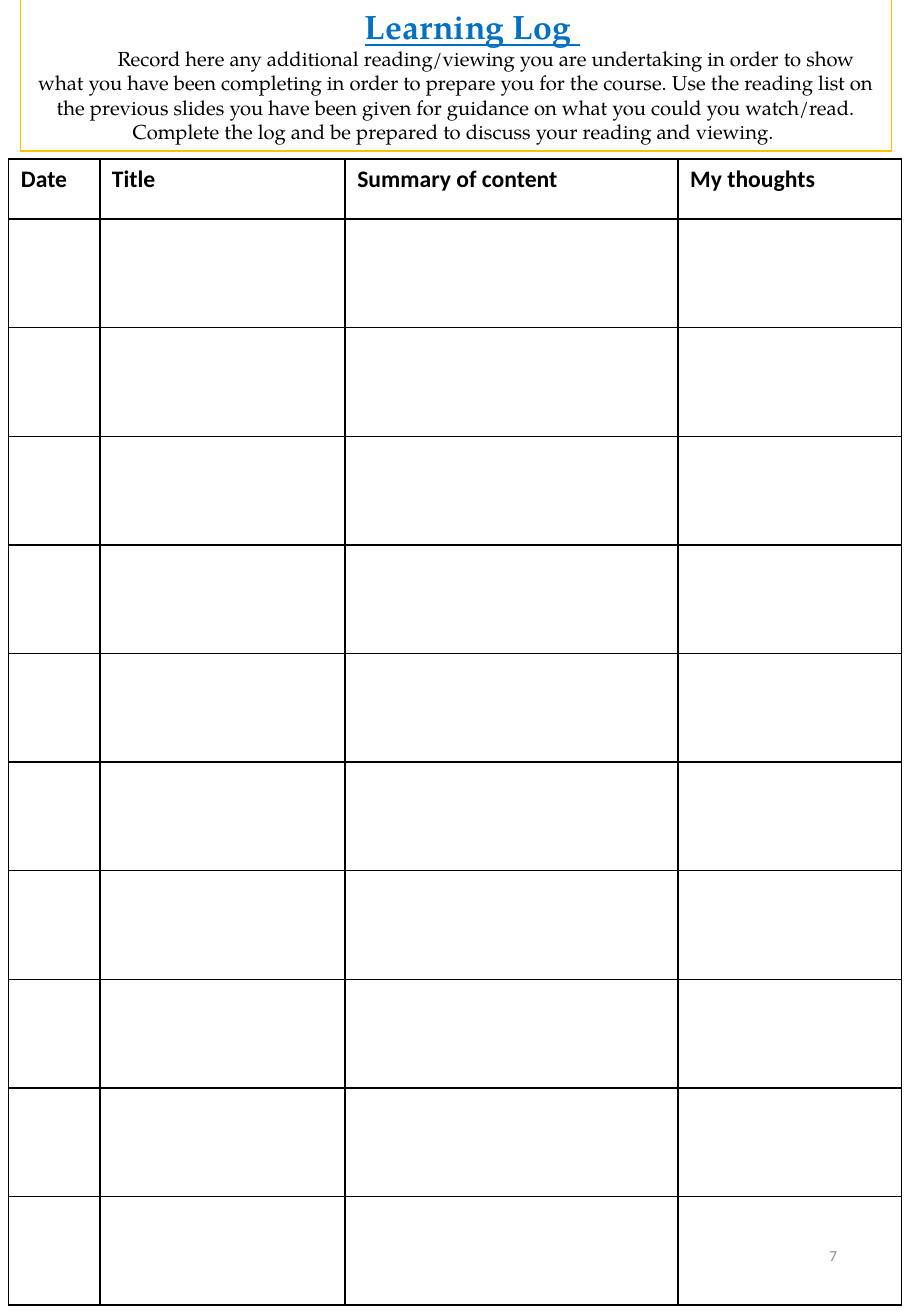
from pptx import Presentation
from pptx.dml.color import RGBColor
from pptx.enum import text as t
from pptx.oxml import parse_xml
from pptx.oxml.ns import nsdecls
from pptx.util import Pt

BLUE = RGBColor(0x00, 0x70, 0xC0)
GOLD = RGBColor(0xFF, 0xC0, 0x00)
GREY = RGBColor(0x8C, 0x8C, 0x8C)
BLACK = RGBColor(0, 0, 0)
WHITE = RGBColor(0xFF, 0xFF, 0xFF)
SERIF, SANS = "TeX Gyre Pagella", "Calibri"

HEADS = ["Date", "Title", "Summary of content", "My thoughts"]
COLS = [54, 145.4, 197.3, 132.5]
ROWS = [35.5] + [64.35] * 10
INTRO = (
    "Record here any additional reading/viewing you are undertaking in order "
    "to show what you have been completing in order to prepare you for the "
    "course. Use the reading list on the previous slides you have been given "
    "for guidance on what you could you watch/read. Complete the log and be "
    "prepared to discuss your reading and viewing. "
)


def write(para, words, size=12, font=SERIF, color=BLACK, bold=False,
          under=False, align=None, indent=0):
    """Add a formatted run to a paragraph."""
    run = para.add_run()
    run.text = words
    run.font.size, run.font.name = Pt(size), font
    run.font.bold, run.font.underline = bold, under
    run.font.color.rgb = color
    if align is not None:
        para.alignment = align
    if indent:
        para._p.get_or_add_pPr().set("indent", str(Pt(indent)))


class Page:
    def __init__(self, deck, font=SANS, line=1):
        self.slide = deck.slides.add_slide(deck.slide_layouts[5])
        self.font, self.line = font, line

    def title(self, left, top, width, height):
        """Frame the title placeholder and return its text frame."""
        box = self.slide.shapes.title
        box.left, box.top = Pt(left), Pt(top)
        box.width, box.height = Pt(width), Pt(height)
        box.fill.solid()
        box.fill.fore_color.rgb = WHITE
        box.line.color.rgb = GOLD
        box.line.width = Pt(self.line)
        frame = box.text_frame
        frame.word_wrap = True
        frame.vertical_anchor = t.MSO_ANCHOR.MIDDLE
        frame.auto_size = t.MSO_AUTO_SIZE.SHAPE_TO_FIT_TEXT
        return frame

    def border(self, cell):
        props = cell._tc.get_or_add_tcPr()
        for i, side in enumerate(("lnL", "lnR", "lnT", "lnB")):
            props.insert(i, parse_xml(
                f'<a:{side} {nsdecls("a")} w="{Pt(self.line)}"><a:solidFill>'
                f'<a:srgbClr val="{BLACK}"/></a:solidFill></a:{side}>'))

    def table(self, left, top, cols, rows, heads):
        grid = self.slide.shapes.add_table(
            len(rows), len(cols), Pt(left), Pt(top),
            Pt(sum(cols)), Pt(sum(rows))).table
        grid.first_row = grid.horz_banding = False
        for col, width in zip(grid.columns, cols):
            col.width = Pt(width)
        for row, height in zip(grid.rows, rows):
            row.height = Pt(height)
        for cell in grid.iter_cells():
            cell.fill.background()
            self.border(cell)
        for cell, head in zip(grid.rows[0].cells, heads):
            write(cell.text_frame.paragraphs[0], head, size=14,
                  font=self.font, bold=True)

    def label(self, left, top, width, height, words, **style):
        box = self.slide.shapes.add_textbox(
            Pt(left), Pt(top), Pt(width), Pt(height))
        frame = box.text_frame
        frame.word_wrap = True
        frame.vertical_anchor = t.MSO_ANCHOR.MIDDLE
        write(frame.paragraphs[0], words, font=self.font, **style)


def main():
    deck = Presentation()
    deck.slide_width, deck.slide_height = Pt(540), Pt(779.76)
    page = Page(deck)

    # Heading and instructions
    frame = page.title(12.2, -0.7, 516.2, 90)
    mid = {"align": t.PP_ALIGN.CENTER, "indent": 36}
    head = frame.paragraphs[0]
    write(head, "Learning Log ", size=20, color=BLUE, bold=True,
          under=True, **mid)
    write(head, "\t", size=20)
    write(frame.add_paragraph(), INTRO, **mid)

    # Reading log
    page.table(5.2, 94.3, COLS, ROWS, HEADS)

    # Page number
    page.label(381.6, 722.9, 121.7, 41.8, "7", size=9, color=GREY,
               align=t.PP_ALIGN.RIGHT)

    deck.save("out.pptx")


if __name__ == "__main__":
    main()
